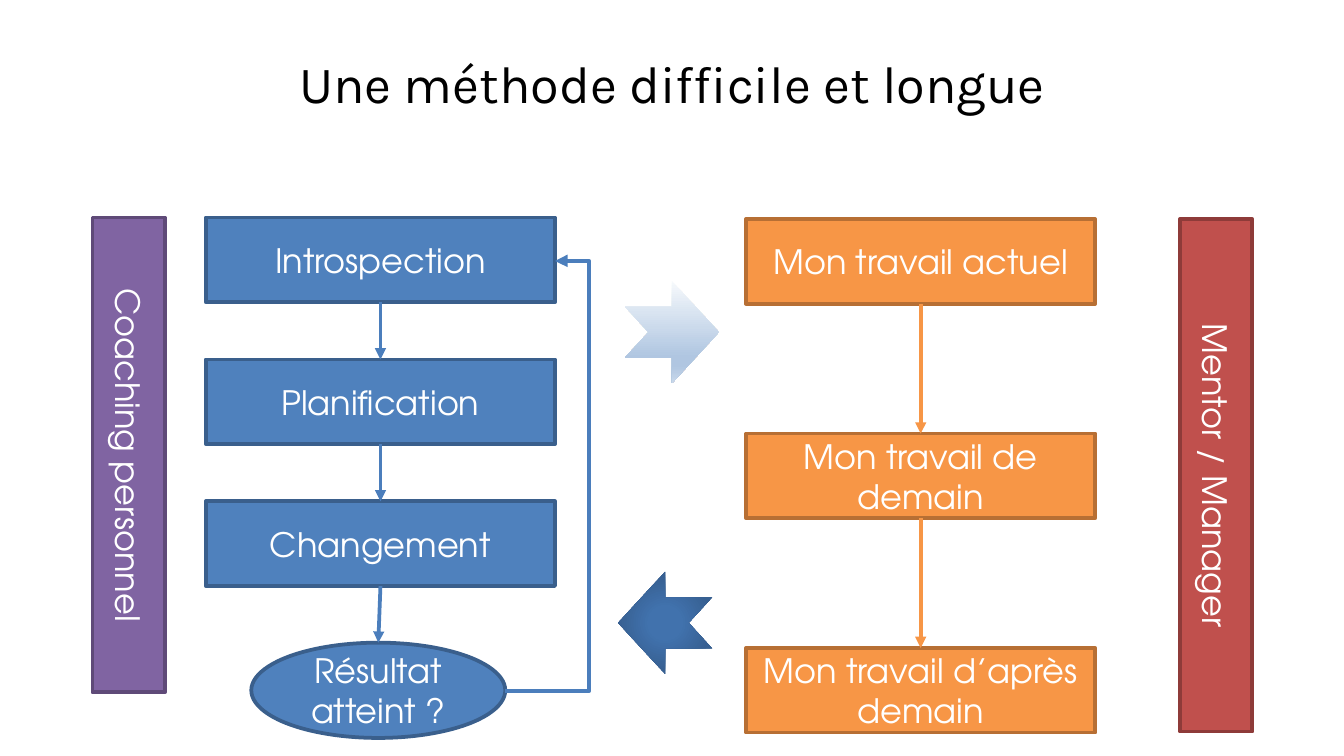
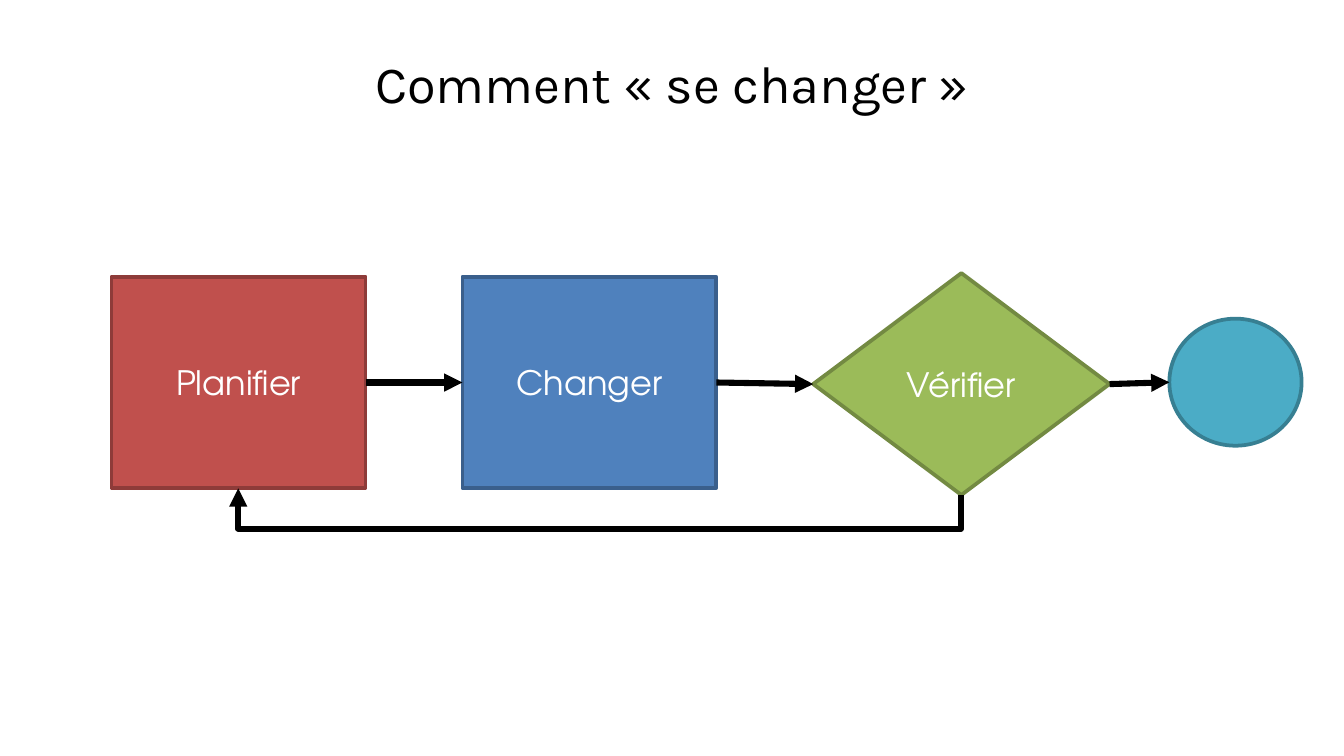
from lxml.etree import SubElement
from pptx import Presentation
from pptx.dml.color import RGBColor
from pptx.enum.shapes import MSO_CONNECTOR, MSO_SHAPE
from pptx.enum.text import MSO_ANCHOR, PP_ALIGN
from pptx.oxml.ns import qn
from pptx.util import Cm, Pt

BLUE, ORANGE, PURPLE = ("4F81BD", "3A5F8C"), ("F79646", "B76F34"), ("8064A2", "5F4A78")
RED, GREEN, TEAL = ("C0504D", "8E3B39"), ("9BBB59", "738A42"), ("4BACC6", "377F92")
LINK_BLUE, BLACK, WHITE = "4B7EBC", "000000", "FFFFFF"
TITLE_FORMAT = {"name": "Karla", "size": Pt(28)}
LABEL_FORMAT = {"name": "TeX Gyre Adventor", "size": Pt(18)}
TOP, LEFT, BOTTOM, RIGHT = range(4)


def add_block(page, kind, area, colours, label="", vertical=False):
    """Add a filled, outlined shape with a centred label; area is in cm."""
    block = page.shapes.add_shape(kind, *map(Cm, area))
    block.shadow.inherit = False
    fill, outline = colours
    block.fill.solid()
    block.fill.fore_color.rgb = RGBColor.from_string(fill)
    block.line.color.rgb = RGBColor.from_string(outline)
    block.line.width = Pt(2)
    if label:
        frame = block.text_frame
        frame.vertical_anchor = MSO_ANCHOR.MIDDLE
        para = frame.paragraphs[0]
        para.alignment = PP_ALIGN.CENTER
        span = para.add_run()
        span.text = label
        for name, value in LABEL_FORMAT.items():
            setattr(span.font, name, value)
        span.font.color.rgb = RGBColor.from_string(WHITE)
        if vertical:
            frame._txBody.bodyPr.set("vert", "vert")
    return block


def add_arrow(page, points, colour, width, bend=None):
    """Add a connector with an arrowhead; bend is the elbow position as a share of its width."""
    kind = MSO_CONNECTOR.STRAIGHT if bend is None else MSO_CONNECTOR.ELBOW
    arrow = page.shapes.add_connector(kind, *map(Cm, points))
    arrow.line.color.rgb = RGBColor.from_string(colour)
    arrow.line.width = Pt(width)
    properties = arrow._element.spPr
    SubElement(properties.find(qn("a:ln")), qn("a:tailEnd"), type="triangle")
    SubElement(properties, qn("a:effectLst"))
    if bend is not None:
        guides = properties.find(qn("a:prstGeom")).get_or_add_avLst()
        SubElement(guides, qn("a:gd"), name="adj1", fmla=f"val {round(bend * 100000)}")
    return arrow


deck = Presentation()
deck.slide_width, deck.slide_height = Cm(25.4), Cm(14.28)

pages = []
for title in ("Une méthode difficile et longue", "Comment «\u00a0se changer\u00a0»"):
    page = deck.slides.add_slide(deck.slide_layouts[6])
    box = page.shapes.add_textbox(0, Cm(0.84), deck.slide_width, Cm(0.97))
    box.text_frame.word_wrap = True
    para = box.text_frame.paragraphs[0]
    para.alignment = PP_ALIGN.CENTER
    span = para.add_run()
    span.text = title
    for name, value in TITLE_FORMAT.items():
        setattr(span.font, name, value)
    span.font.color.rgb = RGBColor.from_string(BLACK)
    pages.append(page)
method_page, change_page = pages

# Slide 1: personal cycle on the left, work stages on the right
steps = [
    add_block(method_page, MSO_SHAPE.RECTANGLE, (3.89, 4.11 + 2.68 * row, 6.6, 1.6), BLUE, label)
    for row, label in enumerate(("Introspection", "Planification", "Changement"))
]
steps.append(add_block(method_page, MSO_SHAPE.OVAL, (4.75, 12.14, 4.8, 1.8), BLUE,
                       "Résultat atteint ?"))
stages = [
    add_block(method_page, MSO_SHAPE.RECTANGLE, (14.1, 4.14 + 4.05 * row, 6.6, 1.6), ORANGE, label)
    for row, label in enumerate(("Mon travail actuel", "Mon travail de demain",
                                 "Mon travail d’après demain"))
]
add_arrow(method_page, (9.55, 13.06, 10.49, 4.93), LINK_BLUE, 2.25, bend=1.68)
for chain, colour in ((steps, LINK_BLUE), (stages, ORANGE[0])):
    for upper, lower in zip(chain, chain[1:]):
        arrow = add_arrow(method_page, (0, 0, 0, 0), colour, 2)
        arrow.begin_connect(upper, BOTTOM)
        arrow.end_connect(lower, TOP)

add_block(method_page, MSO_SHAPE.RECTANGLE, (1.75, 4.11, 1.37, 8.97), PURPLE,
          "Coaching personnel", vertical=True)
add_block(method_page, MSO_SHAPE.RECTANGLE, (22.3, 4.14, 1.37, 9.68), RED,
          "Mentor / Manager", vertical=True)

exchanges = (
    (11.81, 5.31, 0, ((0, "F6F9FC"), (74, "B0C6E1"), (83, "B0C6E1"), (100, "CAD9EB"))),
    (11.68, 10.8, 180, ((0, "4172AD"), (23, "4172AD"), (69, "376092"), (97, "335A88"))),
)
for left, top, rotation, stops in exchanges:
    exchange = method_page.shapes.add_shape(MSO_SHAPE.NOTCHED_RIGHT_ARROW,
                                            Cm(left), Cm(top), Cm(1.78), Cm(1.93))
    exchange.shadow.inherit = False
    exchange.rotation = rotation
    exchange.line.fill.background()
    exchange.fill.gradient()
    gradient = exchange._element.spPr.find(qn("a:gradFill"))
    for child in list(gradient):
        gradient.remove(child)
    stop_list = SubElement(gradient, qn("a:gsLst"))
    for position, colour in stops:
        stop = SubElement(stop_list, qn("a:gs"), pos=str(position * 1000))
        SubElement(stop, qn("a:srgbClr"), val=colour)
    if rotation:
        circle = SubElement(gradient, qn("a:path"), {"path": "circle"})
        SubElement(circle, qn("a:fillToRect"), dict.fromkeys("ltrb", "50000"))
    else:
        SubElement(gradient, qn("a:lin"), ang="5400000", scaled="0")

# Slide 2: plan, change, check and start again
plan = add_block(change_page, MSO_SHAPE.RECTANGLE, (2.11, 5.23, 4.8, 3.99), RED, "Planifier")
change = add_block(change_page, MSO_SHAPE.RECTANGLE, (8.74, 5.23, 4.8, 3.99), BLUE, "Changer")
check = add_block(change_page, MSO_SHAPE.DIAMOND, (15.37, 5.16, 5.6, 4.19), GREEN, "Vérifier")
add_block(change_page, MSO_SHAPE.OVAL, (22.1, 6.02, 2.5, 2.4), TEAL)
for before, after in ((plan, change), (change, check)):
    arrow = add_arrow(change_page, (0, 0, 0, 0), BLACK, 3.25)
    arrow.begin_connect(before, RIGHT)
    arrow.end_connect(after, LEFT)
finish = add_arrow(change_page, (20.97, 7.25, 22.1, 7.22), BLACK, 3.25)
finish.begin_connect(check, RIGHT)
restart = add_arrow(change_page, (11.4, 2.46, 11.27, 16.12), BLACK, 3.25, bend=-4.85)
restart._element.spPr.find(qn("a:xfrm")).set("rot", "5400000")

deck.save("out.pptx")
